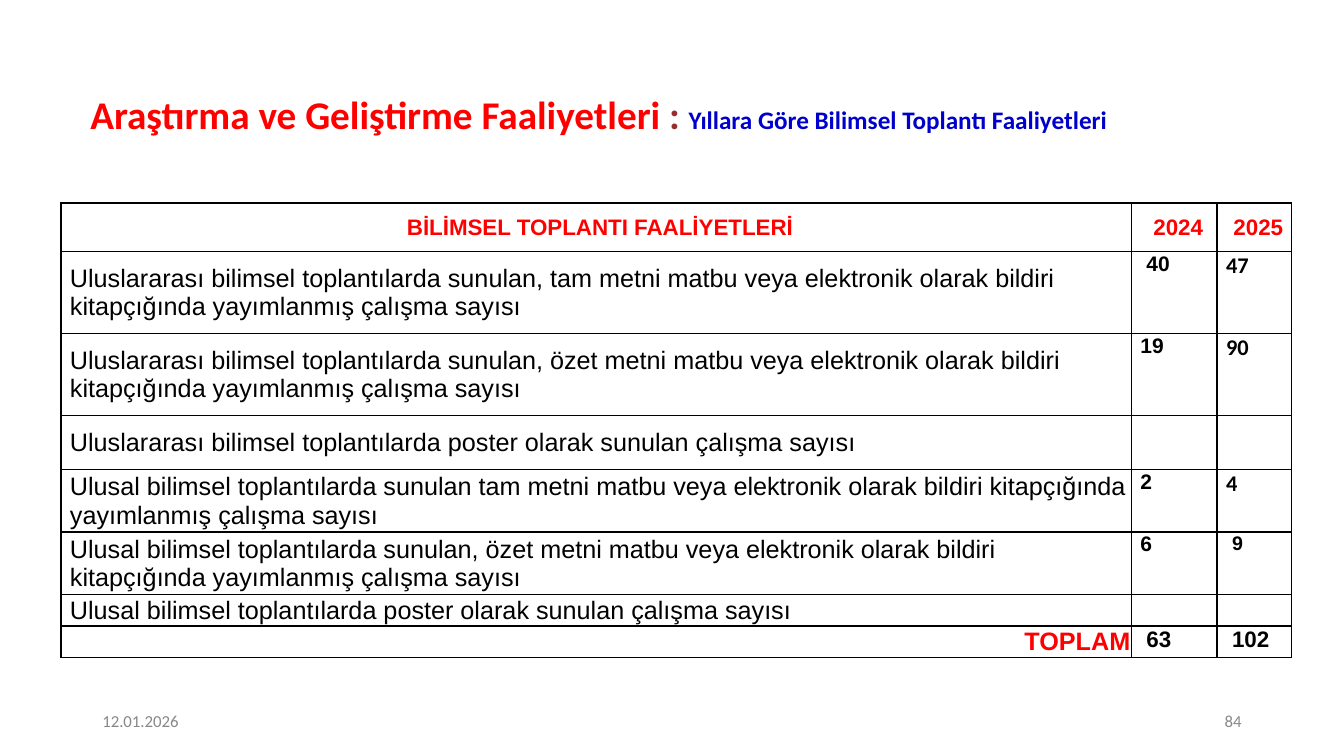
from lxml.etree import SubElement
from pptx import Presentation
from pptx.dml.color import RGBColor
from pptx.enum.text import MSO_ANCHOR, MSO_AUTO_SIZE, PP_ALIGN
from pptx.oxml.ns import qn
from pptx.util import Pt

COLORS = {
    "red": "FF0000",
    "brown": "962E2E",
    "blue": "0000CC",
    "black": "000000",
    "gray": "888888",
    "white": "FFFFFF",
}
COLUMN_WIDTHS = [764.6, 61.2, 53.3]
ROW_HEIGHTS = [34.7, 58.5, 58.5, 38.8, 44.6, 44.6, 22.5, 22.5]
CELL_INDENT = 5.76
WIDE_INDENT = 10

# Each count: text, size, font, left indent
ACTIVITIES = [
    ("Uluslararası bilimsel toplantılarda sunulan, tam metni matbu veya elektronik "
     "olarak bildiri kitapçığında yayımlanmış çalışma sayısı",
     ("40", 15, "Arial", WIDE_INDENT), ("47", 16, "Calibri", CELL_INDENT)),
    ("Uluslararası bilimsel toplantılarda sunulan, özet metni matbu veya elektronik "
     "olarak bildiri kitapçığında yayımlanmış çalışma sayısı",
     ("19", 15, "Arial", CELL_INDENT), ("90", 16, "Calibri", CELL_INDENT)),
    ("Uluslararası bilimsel toplantılarda poster olarak sunulan çalışma sayısı",
     None, None),
    ("Ulusal bilimsel toplantılarda sunulan tam metni matbu veya elektronik "
     "olarak bildiri kitapçığında yayımlanmış çalışma sayısı",
     ("2", 15, "Arial", CELL_INDENT), ("4", 16, "Calibri", CELL_INDENT)),
    ("Ulusal bilimsel toplantılarda sunulan, özet metni matbu veya elektronik "
     "olarak bildiri kitapçığında yayımlanmış çalışma sayısı",
     ("6", 15, "Arial", CELL_INDENT), ("9", 14, "Arial", WIDE_INDENT)),
    ("Ulusal bilimsel toplantılarda poster olarak sunulan çalışma sayısı",
     None, None),
]
TOTALS = [("63", 16, "Arial", WIDE_INDENT), ("102", 16, "Arial", WIDE_INDENT)]


def format_run(run, size, color, font="Arial", bold=False):
    run.font.name = font
    run.font.size = Pt(size)
    run.font.bold = bold
    run.font.color.rgb = RGBColor.from_string(COLORS[color])


def add_title(slide):
    title = slide.shapes.title
    title.left, title.top, title.width, title.height = Pt(18), Pt(59), Pt(823.7), Pt(49)
    frame = title.text_frame
    frame.auto_size = MSO_AUTO_SIZE.NONE
    frame.vertical_anchor = MSO_ANCHOR.MIDDLE
    paragraph = frame.paragraphs[0]
    paragraph.alignment = PP_ALIGN.CENTER
    paragraph.line_spacing = 0.9
    for text, size, color in [
        ("Araştırma ve Geliştirme Faaliyetleri ", 28, "red"),
        (": ", 28, "brown"),
        ("Yıllara Göre Bilimsel Toplantı Faaliyetleri ", 18, "blue"),
    ]:
        run = paragraph.add_run()
        run.text = text
        format_run(run, size, color, "Calibri", True)


def add_footer(slide, text, left, alignment):
    box = slide.shapes.add_textbox(Pt(left), Pt(500.5), Pt(216), Pt(28.8))
    frame = box.text_frame
    frame.word_wrap = True
    frame.vertical_anchor = MSO_ANCHOR.MIDDLE
    frame.text = text
    paragraph = frame.paragraphs[0]
    paragraph.alignment = alignment
    format_run(paragraph.runs[0], 12, "gray", "Calibri")


def style_cell(cell):
    cell.margin_left = cell.margin_right = cell.margin_top = Pt(0.72)
    cell.margin_bottom = Pt(0)
    properties = cell._tc.get_or_add_tcPr()
    for side in ("lnL", "lnR", "lnT", "lnB"):
        line = SubElement(properties, qn(f"a:{side}"), w=str(Pt(1)))
        fill = SubElement(line, qn("a:solidFill"))
        SubElement(fill, qn("a:srgbClr"), val=COLORS["black"])
    cell.fill.solid()
    cell.fill.fore_color.rgb = RGBColor.from_string(COLORS["white"])


def write_cell(cell, text, size, color="black", font="Arial", bold=True,
               alignment=PP_ALIGN.LEFT, anchor=MSO_ANCHOR.MIDDLE, indent=CELL_INDENT):
    cell.text = text
    cell.vertical_anchor = anchor
    paragraph = cell.text_frame.paragraphs[0]
    paragraph.alignment = alignment
    properties = paragraph._p.get_or_add_pPr()
    properties.set("marL", str(Pt(indent)))
    properties.set("indent", "0")
    format_run(paragraph.runs[0], size, color, font, bold)


def write_counts(table, row, counts):
    for column, count in enumerate(counts, start=1):
        if count:
            text, size, font, indent = count
            write_cell(table.cell(row, column), text, size, font=font,
                       anchor=MSO_ANCHOR.TOP, indent=indent)


def add_activity_table(slide):
    frame = slide.shapes.add_table(
        len(ROW_HEIGHTS), len(COLUMN_WIDTHS), Pt(43.5), Pt(145),
        Pt(sum(COLUMN_WIDTHS)), Pt(sum(ROW_HEIGHTS)))
    table = frame.table
    table.first_row = False
    table.horz_banding = False
    for column, width in zip(table.columns, COLUMN_WIDTHS):
        column.width = Pt(width)
    for row, height in zip(table.rows, ROW_HEIGHTS):
        row.height = Pt(height)
    for cell in table.iter_cells():
        style_cell(cell)

    # Header row
    for column, text in enumerate(["BİLİMSEL TOPLANTI FAALİYETLERİ", "2024", "2025"]):
        write_cell(table.cell(0, column), text, 16, "red", alignment=PP_ALIGN.CENTER)

    # Activities
    for row, (label, *counts) in enumerate(ACTIVITIES, start=1):
        write_cell(table.cell(row, 0), label, 18, bold=False)
        write_counts(table, row, counts)

    # Totals
    total_row = len(ROW_HEIGHTS) - 1
    write_cell(table.cell(total_row, 0), "TOPLAM", 18, "red", alignment=PP_ALIGN.RIGHT)
    write_counts(table, total_row, TOTALS)


def main():
    presentation = Presentation()
    presentation.slide_width, presentation.slide_height = Pt(960), Pt(540)
    slide = presentation.slides.add_slide(presentation.slide_layouts[5])
    add_title(slide)
    add_footer(slide, "12.01.2026", 66, PP_ALIGN.LEFT)
    add_footer(slide, "84", 678, PP_ALIGN.RIGHT)
    add_activity_table(slide)
    presentation.save("out.pptx")


if __name__ == "__main__":
    main()
